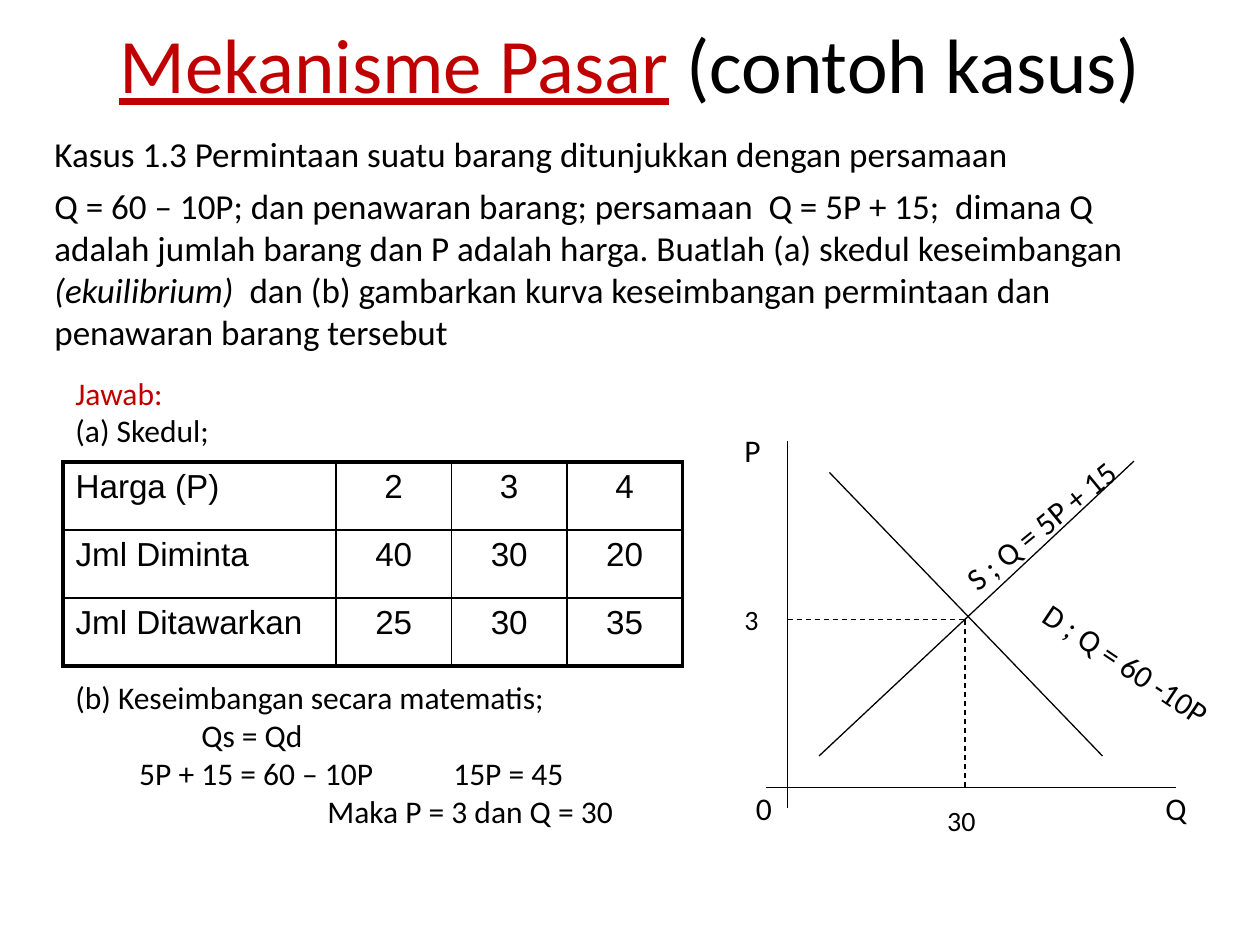
from dataclasses import dataclass

from lxml import etree
from pptx import Presentation
from pptx.dml.color import RGBColor
from pptx.enum import dml, shapes, text
from pptx.oxml import ns
from pptx.util import Pt

BLACK, RED = "000000", "C00000"
THICK, THIN = 2.25, 1
CENTER = text.PP_ALIGN.CENTER


@dataclass
class Segment:
    x1: float
    y1: float
    x2: float
    y2: float
    dashed: bool = False


@dataclass
class Label:
    words: str
    x: float
    y: float
    width: float
    size: float = 18
    rotation: float = 0


def color(hex_value: str) -> RGBColor:
    return RGBColor.from_string(hex_value)


def add_text(paragraph, words: str, *, size: float = 18, font: str = "Calibri",
             fill: str = BLACK, italic: bool = False, underline: bool = False) -> None:
    run = paragraph.add_run()
    run.text = words
    run.font.size = Pt(size)
    run.font.name = font
    run.font.color.rgb = color(fill)
    run.font.italic = italic
    run.font.underline = underline


def add_box(slide, x: float, y: float, width: float, height: float,
            count: int = 1, wrap: bool = True):
    """Add a text box with the given number of paragraphs; return box and paragraphs."""
    box = slide.shapes.add_textbox(Pt(x), Pt(y), Pt(width), Pt(height))
    frame = box.text_frame
    frame.word_wrap = wrap
    for _ in range(count - 1):
        frame.add_paragraph()
    return box, frame.paragraphs


def add_label(slide, label: Label) -> None:
    box, (paragraph,) = add_box(slide, label.x, label.y, label.width,
                                label.size * 1.68, wrap=False)
    box.rotation = label.rotation
    add_text(paragraph, label.words, size=label.size)


def add_segment(slide, segment: Segment) -> None:
    line = slide.shapes.add_connector(
        shapes.MSO_CONNECTOR.STRAIGHT, Pt(segment.x1), Pt(segment.y1),
        Pt(segment.x2), Pt(segment.y2))
    line.line.color.rgb = color(BLACK)
    line.line.width = Pt(0.75)
    if segment.dashed:
        line.line.dash_style = dml.MSO_LINE.DASH
    etree.SubElement(line._element.spPr, ns.qn("a:effectLst"))


def add_border(cell, side: str, width: float) -> None:
    properties = cell._tc.get_or_add_tcPr()
    edge = etree.SubElement(properties, ns.qn(f"a:ln{side}"), w=str(Pt(width)))
    fill = etree.SubElement(edge, ns.qn("a:solidFill"))
    etree.SubElement(fill, ns.qn("a:srgbClr"), val=BLACK)


def add_schedule(slide, rows: list[tuple[str, ...]]) -> None:
    widths = [156, 66, 66, 66]
    row_height = 38.88
    table = slide.shapes.add_table(
        len(rows), len(widths), Pt(36), Pt(264), Pt(sum(widths)),
        Pt(row_height * len(rows))).table
    table.first_row = table.horz_banding = False
    for column, width in zip(table.columns, widths):
        column.width = Pt(width)
    last_row, last_column = len(rows) - 1, len(widths) - 1
    for r, values in enumerate(rows):
        table.rows[r].height = Pt(row_height)
        for c, value in enumerate(values):
            cell = table.cell(r, c)
            outer = {"L": c == 0, "R": c == last_column, "T": r == 0, "B": r == last_row}
            for side, is_outer in outer.items():
                add_border(cell, side, THICK if is_outer else THIN)
            cell.fill.background()
            paragraph = cell.text_frame.paragraphs[0]
            if c:
                paragraph.alignment = CENTER
            add_text(paragraph, value, size=19, font="Arial")


def add_tab_stops(paragraph, *positions: float) -> None:
    stops = etree.SubElement(paragraph._p.get_or_add_pPr(), ns.qn("a:tabLst"))
    for position in positions:
        etree.SubElement(stops, ns.qn("a:tab"), pos=str(Pt(position)), algn="l")


def add_heading_and_case(slide) -> None:
    title, (heading,) = add_box(slide, 36, 0, 648, 72)
    title.text_frame.vertical_anchor = text.MSO_ANCHOR.MIDDLE
    heading.alignment = CENTER
    add_text(heading, "Mekanisme Pasar", size=44, fill=RED, underline=True)
    add_text(heading, " (contoh kasus)", size=44)

    _, (opening, question) = add_box(slide, 24, 72, 660, 134.6, count=2)
    opening.space_before = question.space_before = Pt(6)
    add_text(opening, "Kasus 1.3 Permintaan suatu barang ditunjukkan dengan persamaan", size=20)
    add_text(question, "Q = 60 – 10P; dan penawaran barang; persamaan  Q = 5P + 15;  dimana Q "
             "adalah jumlah barang dan P adalah harga. Buatlah (a) skedul keseimbangan ", size=20)
    add_text(question, "(ekuilibrium)  ", size=20, italic=True)
    add_text(question, "dan (b) gambarkan kurva keseimbangan permintaan dan "
             "penawaran barang tersebut", size=20)


def add_answer(slide) -> None:
    _, (answer, part_a) = add_box(slide, 36, 210, 325.4, 52.6, count=2)
    add_text(answer, "Jawab:", fill=RED)
    add_text(part_a, "(a) Skedul;")

    add_schedule(slide, [
        ("Harga (P)", "2", "3", "4"),
        ("Jml Diminta", "40", "30", "20"),
        ("Jml Ditawarkan", "25", "30", "35"),
    ])

    steps = [
        ("(b) Keseimbangan secara matematis;", ()),
        ("\tQs = Qd", (72,)),
        ("\t5P + 15 = 60 – 10P\t15P = 45", (36.5, 216)),
        ("\tMaka P = 3 dan Q = 30", (144,)),
    ]
    _, paragraphs = add_box(slide, 36, 384, 379.4, 116.6, count=len(steps))
    for paragraph, (words, stops) in zip(paragraphs, steps):
        if stops:
            add_tab_stops(paragraph, *stops)
        add_text(paragraph, words)


def add_curves(slide) -> None:
    axis_x, axis_y = 450, 450
    balance_x, balance_y = 551.5, 354
    for segment in (
        Segment(axis_x, 252, axis_x, 462),
        Segment(438, axis_y, 672, axis_y),
        Segment(474, 270, 630, 432),
        Segment(468, 432, 648, 263.5),
        Segment(axis_x, balance_y, balance_x, balance_y, dashed=True),
        Segment(balance_x, balance_y, balance_x, axis_y, dashed=True),
    ):
        add_segment(slide, segment)
    for label in (
        Label("P", 418.3, 242.6, 27.4),
        Label("Q", 658.8, 447.1, 29.5),
        Label("0", 424.8, 447.1, 25.2),
        Label("3", 418.3, 340.6, 23, size=16),
        Label("30", 534.2, 455.8, 32.4, size=16),
        Label("D ; Q = 60 -10P", 579.6, 371.5, 146.9, rotation=33.8),
        Label("S ; Q = 5P + 15", 532.8, 277.2, 145.4, rotation=320.7),
    ):
        add_label(slide, label)


def main() -> None:
    presentation = Presentation()
    presentation.slide_width, presentation.slide_height = Pt(720), Pt(540)
    slide = presentation.slides.add_slide(presentation.slide_layouts[6])
    add_heading_and_case(slide)
    add_answer(slide)
    add_curves(slide)
    presentation.save("out.pptx")


if __name__ == "__main__":
    main()
